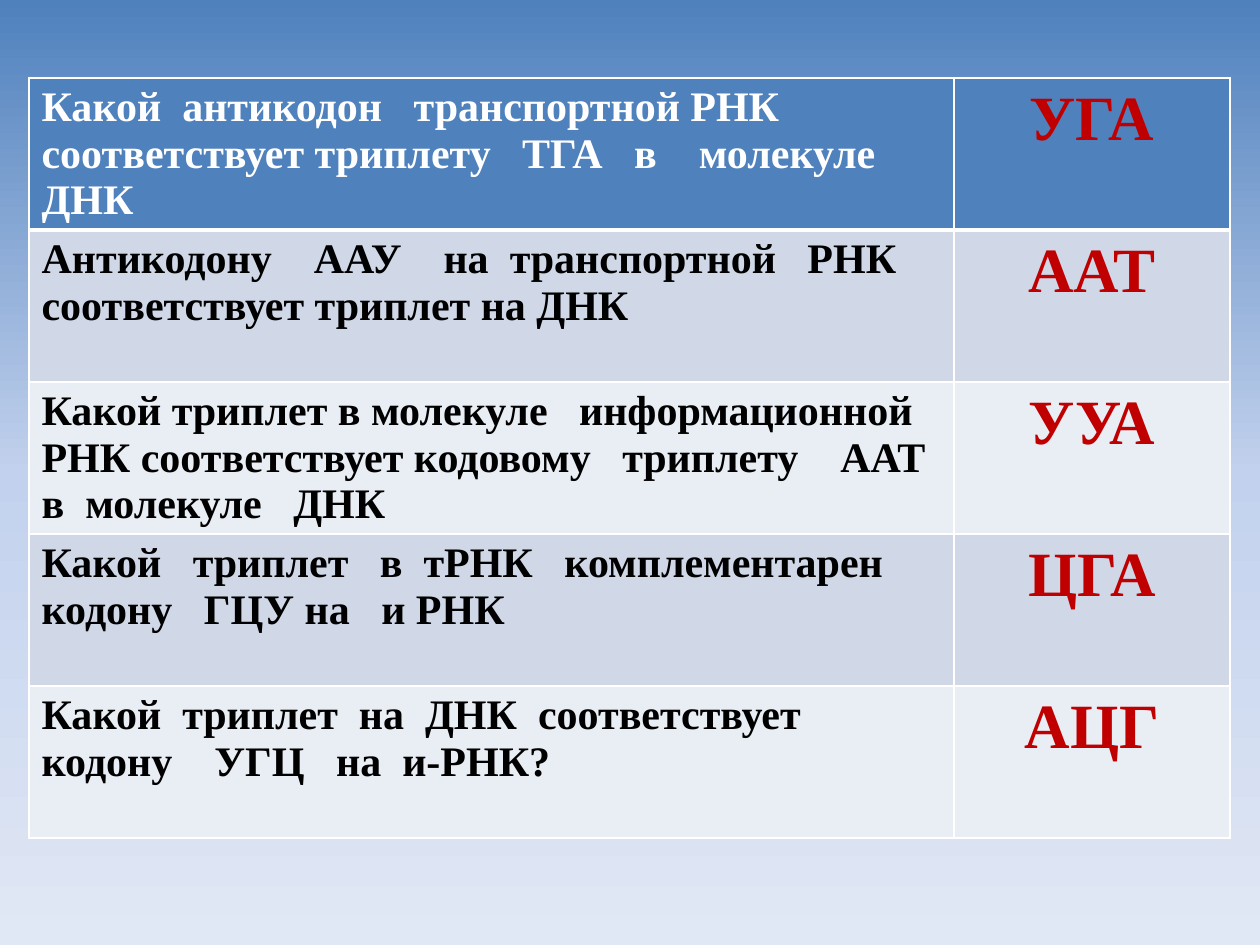
from copy import deepcopy
from lxml import etree
from pptx import Presentation
from pptx import util as u
from pptx.dml.color import RGBColor
from pptx.enum import text
from pptx.oxml.ns import qn

PX = 914400 // 126
COLORS = {
    "header": "4F81BD", "band_dark": "D0D8E8", "band_light": "E9EDF4",
    "white": "FFFFFF", "black": "000000", "answer": "C00000",
    "bg_mid": "C2D1ED", "bg_low": "E1E8F5",
}
ROWS = [
    ("Какой  антикодон   транспортной РНК    соответствует триплету   ТГА   в    молекуле     ДНК", "УГА"),
    ("Антикодону    ААУ    на  транспортной   РНК   соответствует триплет на ДНК", "ААТ"),
    ("Какой триплет в молекуле   информационной РНК соответствует кодовому   триплету    ААТ  в  молекуле   ДНК", "УУА"),
    ("Какой   триплет   в  тРНК   комплементарен   кодону   ГЦУ на   и РНК", "ЦГА"),
    ("Какой  триплет  на  ДНК  соответствует   кодону    УГЦ   на  и-РНК?", "АЦГ"),
]
LEFT, TOP, ROW_H = 29, 78, 152
COL_W = [925, 276]


def rgb(name):
    return RGBColor.from_string(COLORS[name])


def set_borders(cell, widths):
    """Draw white left, right, top and bottom borders, widths in points."""
    tc_pr = cell._tc.get_or_add_tcPr()
    for i, (side, width) in enumerate(zip("LRTB", widths)):
        ln = etree.Element(qn("a:ln" + side), w=str(u.Pt(width)))
        fill = etree.SubElement(ln, qn("a:solidFill"))
        etree.SubElement(fill, qn("a:srgbClr"), val=COLORS["white"])
        tc_pr.insert(i, ln)


prs = Presentation()
prs.slide_width, prs.slide_height = 1260 * PX, 945 * PX
s = prs.slides.add_slide(prs.slide_layouts[6])

# Background: three-stop vertical gradient
bg = s.background.fill
bg.gradient()
bg.gradient_angle = 270
first = next(s._element.iter(qn("a:gs")))
first.addnext(deepcopy(first))
for stop, pos, name in zip(bg.gradient_stops, (0, 0.5, 1), ("header", "bg_mid", "bg_low")):
    stop.position = pos
    stop.color.rgb = rgb(name)

# Table of questions and answers
tbl = s.shapes.add_table(len(ROWS), len(COL_W), LEFT * PX, TOP * PX,
                         sum(COL_W) * PX, len(ROWS) * ROW_H * PX).table
for col, width in zip(tbl.columns, COL_W):
    col.width = width * PX

for i, row in enumerate(ROWS):
    tbl.rows[i].height = ROW_H * PX
    band = "header" if i == 0 else ("band_dark" if i % 2 else "band_light")
    styles = [
        (24, "black" if i else "white", text.PP_ALIGN.LEFT),
        (36, "answer", text.PP_ALIGN.CENTER),
    ]
    for j, (words, (size, color, align)) in enumerate(zip(row, styles)):
        cell = tbl.cell(i, j)
        cell.fill.solid()
        cell.fill.fore_color.rgb = rgb(band)
        # Thick rule between the header and the body
        set_borders(cell, (1, 1, 3 if i == 1 else 1, 3 if i == 0 else 1))
        p = cell.text_frame.paragraphs[0]
        p.alignment = align
        r = p.add_run()
        r.text = words
        for key, value in {"name": "Times New Roman", "size": u.Pt(size), "bold": True}.items():
            setattr(r.font, key, value)
        r.font.color.rgb = rgb(color)

prs.save("out.pptx")
